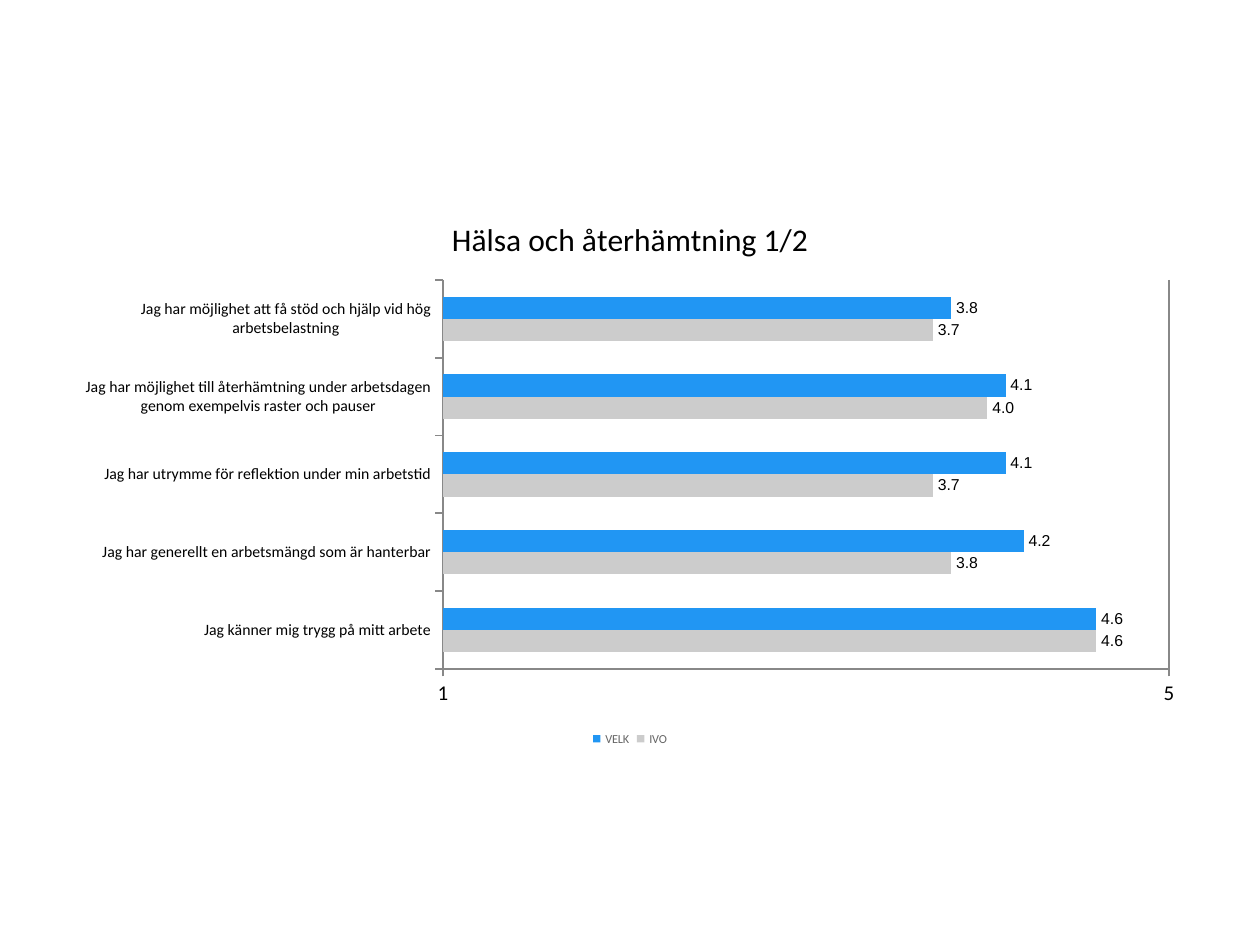
"""Build the slide with the clustered bar chart on health and recovery."""
from pptx import Presentation
from pptx.chart import data
from pptx.dml import color
from pptx.enum import chart as kinds
from pptx.util import Inches, Pt

COLORS = {"text": "000000", "axis": "888888", "legend": "666666",
          "IVO": "CCCCCC", "VELK": "2196F3"}
SCORES = {"IVO": (4.6, 3.8, 3.7, 4.0, 3.7), "VELK": (4.6, 4.2, 4.1, 4.1, 3.8)}
STATEMENTS = (
    "Jag känner mig trygg på mitt arbete",
    "Jag har generellt en arbetsmängd som är hanterbar",
    "Jag har utrymme för reflektion under min arbetstid",
    "Jag har möjlighet till återhämtning under arbetsdagen genom exempelvis raster och pauser",
    "Jag har möjlighet att få stöd och hjälp vid hög arbetsbelastning",
)


def rgb(key):
    return color.RGBColor.from_string(COLORS[key])


def set_font(font, size, key="text", name="Calibri"):
    formats = {"size": Pt(size), "name": name, "bold": False}
    for attribute, value in formats.items():
        setattr(font, attribute, value)
    font.color.rgb = rgb(key)


deck = Presentation()
deck.slide_width, deck.slide_height = Inches(10), Inches(7.5)
slide = deck.slides.add_slide(deck.slide_layouts[6])

survey = data.CategoryChartData()
survey.categories = STATEMENTS
for group, scores in SCORES.items():
    survey.add_series(group, scores)
health = slide.shapes.add_chart(
    kinds.XL_CHART_TYPE.BAR_CLUSTERED,
    Inches(0.5), Inches(1.54), Inches(9), Inches(4.42), survey).chart
set_font(health.font, 10)

health.has_title = True
heading = health.chart_title.text_frame
heading.text = "Hälsa och återhämtning 1/2"
set_font(heading.paragraphs[0].runs[0].font, 18)

health.has_legend = True
health.legend.position = kinds.XL_LEGEND_POSITION.BOTTOM
health.legend.include_in_layout = False
set_font(health.legend.font, 7, "legend")

statement_axis, score_axis = health.category_axis, health.value_axis
scale = {"minimum_scale": 1, "maximum_scale": 5, "major_unit": 4,
         "has_major_gridlines": True}
for attribute, value in scale.items():
    setattr(score_axis, attribute, value)
for axis, size in ((statement_axis, 9), (score_axis, 12)):
    axis.major_tick_mark = kinds.XL_TICK_MARK.OUTSIDE
    axis.minor_tick_mark = kinds.XL_TICK_MARK.NONE
    axis.tick_labels.number_format = "General"
    axis.tick_labels.number_format_is_linked = False
    set_font(axis.tick_labels.font, size)
for line in (statement_axis.format.line, score_axis.format.line,
             score_axis.major_gridlines.format.line):
    line.width = Pt(1)
    line.color.rgb = rgb("axis")

bars = health.plots[0]
bars.vary_by_categories = False
bars.gap_width = 150
bars.overlap = 0
for series in bars.series:
    series.format.fill.solid()
    series.format.fill.fore_color.rgb = rgb(series.name)
    labels = series.data_labels
    label_format = {"show_value": True, "number_format": "##.0",
                    "number_format_is_linked": False,
                    "position": kinds.XL_LABEL_POSITION.OUTSIDE_END}
    for attribute, value in label_format.items():
        setattr(labels, attribute, value)
    set_font(labels.font, 9, name="Arial")

deck.save("out.pptx")
